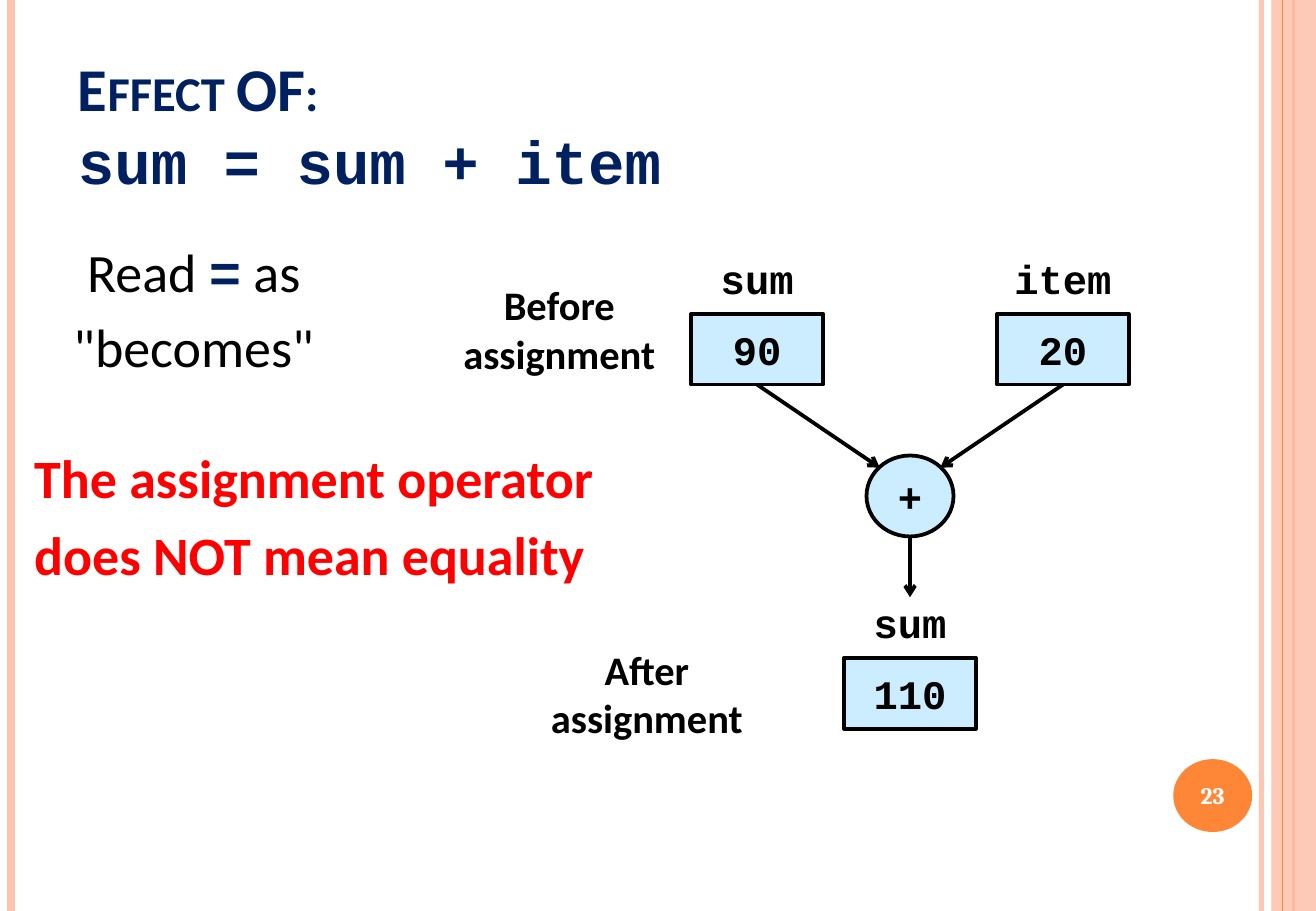
from dataclasses import dataclass

from lxml import etree
from pptx import Presentation
from pptx.dml.color import RGBColor
from pptx.enum.shapes import MSO_CONNECTOR, MSO_SHAPE
from pptx.enum.text import MSO_ANCHOR, MSO_AUTO_SIZE, PP_ALIGN
from pptx.oxml.ns import qn
from pptx.util import Pt

PX = 7620  # EMU per px, 120 px to the inch
WIDTH, HEIGHT = 1300, 900
RECT, OVAL = MSO_SHAPE.RECTANGLE, MSO_SHAPE.OVAL
STRAIGHT = MSO_CONNECTOR.STRAIGHT
LEFT, CENTER = PP_ALIGN.LEFT, PP_ALIGN.CENTER
TOP, MIDDLE, BOTTOM = MSO_ANCHOR.TOP, MSO_ANCHOR.MIDDLE, MSO_ANCHOR.BOTTOM
NO_AUTOFIT = MSO_AUTO_SIZE.NONE


@dataclass(frozen=True)
class Theme:
    black: str = "000000"
    white: str = "FFFFFF"
    navy: str = "002060"
    red: str = "FF0000"
    node: str = "CCECFF"
    peach: str = "FEC3AE"
    orange: str = "FE8637"
    body: str = "Calibri"
    code: str = "Courier New"
    number: str = "Cambria"
    title_size: int = 36
    text_size: int = 32
    label_size: int = 24
    number_size: int = 14
    outline: float = 2.25


def emu(*lengths):
    return [n * PX for n in lengths]


def add_run(p, text, *, font, size, color, bold=False, small_caps=False):
    r = p.add_run()
    r.text = text
    f = r.font
    f.name, f.size, f.bold = font, Pt(size), bold
    f.color.rgb = RGBColor.from_string(color)
    r._r.get_or_add_rPr().set("cap", "small" if small_caps else "none")


def paint(fill, color, opacity=100):
    """Give a solid fill, see-through when opacity is below 100 percent."""
    fill.solid()
    fill.fore_color.rgb = RGBColor.from_string(color)
    if opacity < 100:
        clr = next(fill._xPr.iter(qn("a:srgbClr")))
        etree.SubElement(clr, qn("a:alpha")).set("val", str(opacity * 1000))


class SlideBuilder:
    def __init__(self, s, theme):
        self.s, self.t = s, theme

    def frame(self, sp, anchor, margin=None):
        tf = sp.text_frame
        tf.word_wrap, tf.auto_size, tf.vertical_anchor = True, NO_AUTOFIT, anchor
        if margin is not None:
            tf.margin_left = tf.margin_right = margin
            tf.margin_top = tf.margin_bottom = margin
        return tf

    def title(self, x, y, w, h, heading, code):
        sp = self.s.shapes.title
        sp.left, sp.top, sp.width, sp.height = emu(x, y, w, h)
        p = self.frame(sp, BOTTOM).paragraphs[0]
        p.alignment = LEFT
        style = dict(size=self.t.title_size, color=self.t.navy, bold=True)
        add_run(p, heading, font=self.t.body, small_caps=True, **style)
        p.add_line_break()
        add_run(p, code, font=self.t.code, **style)

    def text(self, x, y, w, h, paragraphs, align=LEFT, spacing=None):
        """Each paragraph is a list of (text, format overrides) pairs."""
        sp = self.s.shapes.add_textbox(*emu(x, y, w, h))
        tf = self.frame(sp, TOP)
        base = dict(font=self.t.body, size=self.t.text_size, color=self.t.black)
        for i, runs in enumerate(paragraphs):
            p = tf.add_paragraph() if i else tf.paragraphs[0]
            p.alignment, p.space_before, p.line_spacing = align, Pt(6), spacing
            for text, extra in runs:
                add_run(p, text, **{**base, **extra})

    def shape(self, kind, x, y, w, h, *lines, fill, opacity=100, outline=False, **style):
        sp = self.s.shapes.add_shape(kind, *emu(x, y, w, h))
        sp.shadow.inherit = False
        paint(sp.fill, fill, opacity)
        if outline:
            paint(sp.line.fill, self.t.black)
            sp.line.width = Pt(self.t.outline)
        else:
            sp.line.fill.background()
        tf = self.frame(sp, MIDDLE, margin=0)
        base = dict(font=self.t.code, size=self.t.label_size, color=self.t.black, bold=True)
        for i, line in enumerate(lines):
            p = tf.add_paragraph() if i else tf.paragraphs[0]
            p.alignment = CENTER
            add_run(p, line, **{**base, **style})

    def line(self, x1, y1, x2, y2, color, width, opacity=100, arrow=False):
        c = self.s.shapes.add_connector(STRAIGHT, *emu(x1, y1, x2, y2))
        paint(c.line.fill, color, opacity)
        c.line.width = Pt(width)
        if arrow:
            etree.SubElement(c.line._get_or_add_ln(), qn("a:tailEnd")).set("type", "arrow")
        etree.SubElement(c._element.spPr, qn("a:effectLst"))

    def stripe(self, x, color, width, opacity=100):
        self.line(x, 0, x, HEIGHT, color, width, opacity)

    def arrow(self, x1, y1, x2, y2):
        self.line(x1, y1, x2, y2, self.t.black, self.t.outline, arrow=True)

    def variable(self, name, value, cx, y):
        """A memory cell centred on cx, with its name above it."""
        self.shape(RECT, cx - 65, y, 130, 70, value, fill=self.t.node, outline=True)
        self.shape(RECT, cx - 65, y - 60, 130, 50, name, fill=self.t.white)

    def caption(self, x, y, w, *lines):
        self.shape(RECT, x, y, w, 110, *lines, fill=self.t.white, font=self.t.body)


def main():
    prs = Presentation()
    prs.slide_width, prs.slide_height = emu(WIDTH, HEIGHT)
    t = Theme()
    b = SlideBuilder(prs.slides.add_slide(prs.slide_layouts[5]), t)

    b.stripe(1246, t.peach, 3, opacity=93)
    b.stripe(11, t.peach, 4.5)
    b.stripe(1278, t.orange, 1.5)
    b.shape(RECT, 1256, 0, 44, HEIGHT, fill=t.peach, opacity=87)
    b.stripe(1267, t.orange, 0.75)
    b.shape(OVAL, 1159, 750, 78, 72, "23", fill=t.orange,
            font=t.number, size=t.number_size, color=t.white)

    b.title(65, 36, 1062, 164, "Effect OF:", "sum = sum + item")

    sum_x, plus_x, item_x = 748, 899, 1050
    before_y, after_y = 310, 650
    b.variable("sum", "90", sum_x, before_y)
    b.variable("item", "20", item_x, before_y)
    b.variable("sum", "110", plus_x, after_y)
    b.shape(OVAL, plus_x - 43, 450, 86, 80, "+", fill=t.node, outline=True)
    b.arrow(sum_x, 380, plus_x - 30, 462)
    b.arrow(item_x, 380, plus_x + 30, 462)
    b.arrow(plus_x, 530, plus_x, 590)
    b.caption(433, 270, 239, "Before assignment")
    b.caption(487, 630, 304, "After", "assignment")

    b.text(22, 420, 661, 170, [[("The assignment operator does NOT mean equality",
                                 dict(color=t.red, bold=True))]], spacing=1.2)
    equals = ("=", dict(font=t.code, color=t.navy, bold=True))
    b.text(32, 230, 319, 160, [[("Read ", {}), equals, (" as", {})],
                               [('"becomes"', {})]], align=CENTER)

    prs.save("out.pptx")


if __name__ == "__main__":
    main()
